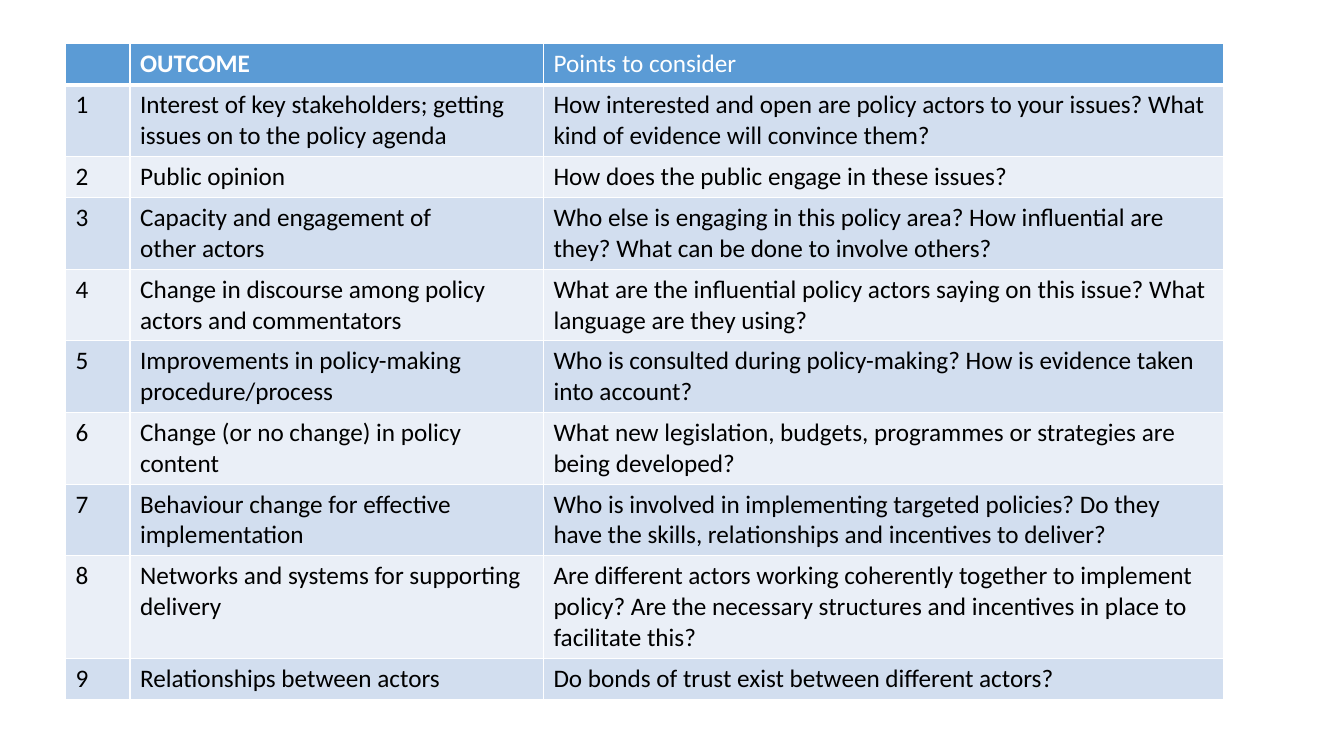
from lxml.etree import SubElement
from pptx import Presentation
from pptx.dml.color import RGBColor
from pptx.oxml.ns import qn
from pptx.util import Pt

PX = 9144  # EMU per px, 100 px to the inch
COLORS = {"header": "5B9BD5", "odd": "D2DEEF", "even": "EAEFF7",
          "line": "FFFFFF", "head_text": "FFFFFF", "text": "000000"}
COL_WIDTHS = [64, 410, 675]
ROW_HEIGHT = 41

HEADER = ["", "OUTCOME", "Points to consider"]
OUTCOMES = [
    ("Interest of key stakeholders; getting issues on to the policy agenda",
     "How interested and open are policy actors to your issues? What\n"
     "kind of evidence will convince them?"),
    ("Public opinion",
     "How does the public engage in these issues?"),
    ("Capacity and engagement of\nother actors",
     "Who else is engaging in this policy area? How influential are they? "
     "What can be done to involve others?"),
    ("Change in discourse among policy actors and commentators",
     "What are the influential policy actors saying on this issue? What\n"
     "language are they using?"),
    ("Improvements in policy-making procedure/process",
     "Who is consulted during policy-making? How is evidence taken\n"
     "into account?"),
    ("Change (or no change) in policy content",
     "What new legislation, budgets, programmes or strategies are being developed?"),
    ("Behaviour change for effective implementation",
     "Who is involved in implementing targeted policies? "
     "Do they have the skills, relationships and incentives to deliver?"),
    ("Networks and systems for supporting delivery",
     "Are different actors working coherently together to implement policy? "
     "Are the necessary structures and incentives in place to facilitate this?"),
    ("Relationships between actors",
     "Do bonds of trust exist between different actors?"),
]


def rgb(name):
    return RGBColor.from_string(COLORS[name])


def set_borders(cell, widths):
    tcPr = cell._tc.get_or_add_tcPr()
    for side, width in widths.items():
        ln = SubElement(tcPr, qn(f"a:ln{side}"), w=str(Pt(width)))
        fill = SubElement(ln, qn("a:solidFill"))
        SubElement(fill, qn("a:srgbClr"), val=COLORS["line"])


def fill_cell(cell, text, fill, borders, font):
    set_borders(cell, borders)
    cell.fill.solid()
    cell.fill.fore_color.rgb = rgb(fill)
    tf = cell.text_frame
    tf.text = text
    for p in tf.paragraphs:
        for r in p.runs:
            for name, value in font.items():
                setattr(r.font, name, value)
            r.font.color.rgb = rgb("head_text" if fill == "header" else "text")


def outcome_table(s, x, y, w, h):
    rows = [HEADER] + [(str(n), *row) for n, row in enumerate(OUTCOMES, 1)]
    sp = s.shapes.add_table(len(rows), len(HEADER), x * PX, y * PX, w * PX, h * PX)
    table = sp.table
    for column, width in zip(table.columns, COL_WIDTHS):
        column.width = width * PX
    for i, row in enumerate(rows):
        table.rows[i].height = ROW_HEIGHT * PX
        fill = "header" if i == 0 else "odd" if i % 2 else "even"
        # A thick rule parts the header from the body
        borders = {"L": 1, "R": 1, "T": 3 if i == 1 else 1, "B": 3 if i == 0 else 1}
        for j, text in enumerate(row):
            font = {"name": "Calibri", "size": Pt(18), "bold": (i, j) == (0, 1)}
            fill_cell(table.cell(i, j), text, fill, borders, font)
    # Rows grow with their text up to the full height
    sp.height = h * PX


def main():
    prs = Presentation()
    prs.slide_width, prs.slide_height = 1333 * PX, 750 * PX
    s = prs.slides.add_slide(prs.slide_layouts[6])
    outcome_table(s, 65, 43, sum(COL_WIDTHS), 642)
    prs.save("out.pptx")


if __name__ == "__main__":
    main()
